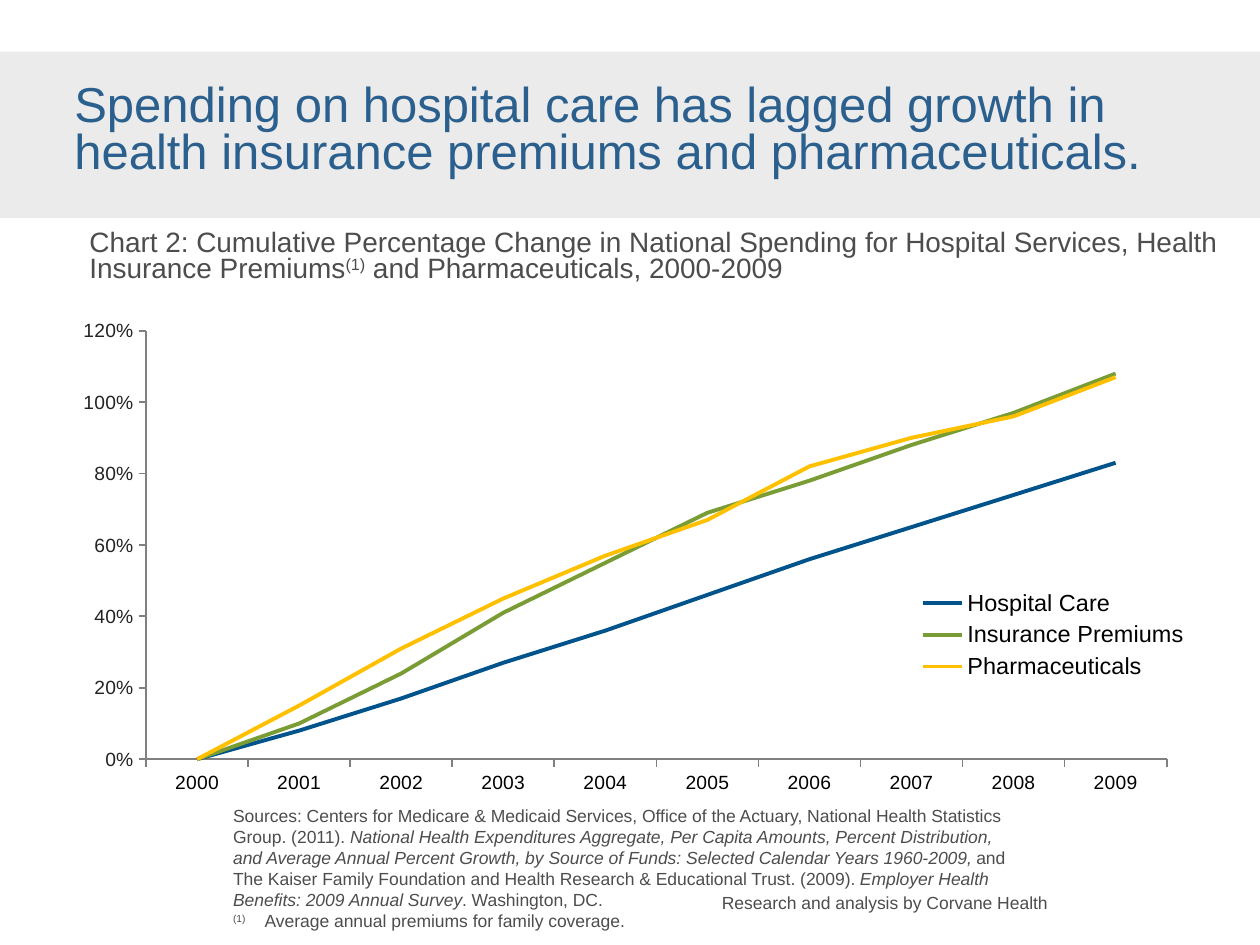
"""Build the slide on growth in hospital, premium and drug spending."""
import pptx
import pptx.chart.data
import pptx.dml.color
import pptx.enum.chart
import pptx.enum.shapes
import pptx.enum.text
import pptx.oxml
import pptx.oxml.ns
import pptx.util

Inches = pptx.util.Inches
Pt = pptx.util.Pt
RGBColor = pptx.dml.color.RGBColor

FONT = "Arial"
BAND = RGBColor(0xEB, 0xEB, 0xEB)
TITLE = RGBColor(0x2B, 0x60, 0x8E)
GREY = RGBColor(0x4D, 0x4D, 0x4D)
BLACK = RGBColor(0, 0, 0)
DARK = RGBColor(0x23, 0x23, 0x23)
AXIS = RGBColor(0x80, 0x80, 0x80)

SERIES = [
    ("Hospital Care", RGBColor(0x00, 0x54, 0x8B),
     [0, 0.08, 0.17, 0.27, 0.36, 0.46, 0.56, 0.65, 0.74, 0.83]),
    ("Insurance Premiums", RGBColor(0x79, 0x9D, 0x34),
     [0, 0.1, 0.24, 0.41, 0.55, 0.69, 0.78, 0.88, 0.97, 1.08]),
    ("Pharmaceuticals", RGBColor(0xFF, 0xC0, 0x00),
     [0, 0.15, 0.31, 0.45, 0.57, 0.67, 0.82, 0.9, 0.96, 1.07]),
]

HEAD = [("Spending on hospital care has lagged growth in health insurance "
         "premiums and pharmaceuticals.", "")]
CAPTION = [
    ("Chart 2: Cumulative Percentage Change in National Spending for "
     "Hospital Services, Health Insurance Premiums", ""),
    ("(1)", "super"),
    (" and Pharmaceuticals, 2000-2009", ""),
]
SOURCES = [
    ("Sources: Centers for Medicare & Medicaid Services, Office of the "
     "Actuary, National Health Statistics Group. (2011). ", ""),
    ("National Health Expenditures Aggregate, Per Capita Amounts, Percent "
     "Distribution, and Average Annual Percent Growth, by Source of Funds: "
     "Selected Calendar Years 1960-2009, ", "italic"),
    ("and The Kaiser Family Foundation and Health Research & Educational "
     "Trust. (2009). ", ""),
    ("Employer Health Benefits: 2009 Annual Survey", "italic"),
    (". Washington, DC.", ""),
]
NOTE = [("(1)", "super"), ("\tAverage annual premiums for family coverage.", "")]
CREDIT = [("Research and analysis by Corvane Health", "")]


def style(font, size, color):
    """Set face, size and colour of a font."""
    font.name = FONT
    font.size = Pt(size)
    font.color.rgb = color


def write(para, runs, size=10, color=GREY, space=None, hang=0):
    """Fill a paragraph with runs marked plain, italic or super."""
    para.alignment = pptx.enum.text.PP_ALIGN.LEFT
    if space:
        para.line_spacing = space
    if hang:
        props = para._p.get_or_add_pPr()
        props.set("marL", str(Inches(hang)))
        props.set("indent", str(-Inches(hang)))
    for text, mark in runs:
        run = para.add_run()
        run.text = text
        style(run.font, size, color)
        if mark == "italic":
            run.font.italic = True
        elif mark == "super":
            run._r.get_or_add_rPr().set("baseline", "30000")


def clear(frame, anchor=pptx.enum.text.MSO_ANCHOR.TOP):
    """Give a text frame wrapping, no insets and a fixed size."""
    frame.word_wrap = True
    frame.auto_size = pptx.enum.text.MSO_AUTO_SIZE.NONE
    frame.vertical_anchor = anchor
    frame.margin_left = frame.margin_right = 0
    frame.margin_top = frame.margin_bottom = 0


def add_text(slide, box, runs, **look):
    """Add a text box and return its frame."""
    frame = slide.shapes.add_textbox(*map(Inches, box)).text_frame
    clear(frame)
    write(frame.paragraphs[0], runs, **look)
    return frame


def add_title(slide):
    """Draw the band and set the title on top of it."""
    band = slide.shapes.add_shape(
        pptx.enum.shapes.MSO_SHAPE.RECTANGLE,
        Inches(0), Inches(0.41), Inches(10), Inches(1.32))
    band.shadow.inherit = False
    band.fill.solid()
    band.fill.fore_color.rgb = BAND
    band.line.fill.background()
    title = slide.shapes.title
    title.left, title.top = Inches(0.59), Inches(0.67)
    title.width, title.height = Inches(9), Inches(0.75)
    clear(title.text_frame, pptx.enum.text.MSO_ANCHOR.MIDDLE)
    write(title.text_frame.paragraphs[0], HEAD,
          size=28, color=TITLE, space=0.8)
    slide.shapes._spTree.append(title._element)


def place(parent, index, box, inner=False):
    """Give a chart part a manual layout in fractions of the chart."""
    for old in parent.findall(pptx.oxml.ns.qn("c:layout")):
        parent.remove(old)
    parts = [("layoutTarget", "inner")] if inner else []
    parts += [("xMode", "edge"), ("yMode", "edge")]
    parts += zip("xywh", box)
    body = "".join(f'<c:{tag} val="{val}"/>' for tag, val in parts)
    parent.insert(index, pptx.oxml.parse_xml(
        f'<c:layout {pptx.oxml.ns.nsdecls("c")}>'
        f"<c:manualLayout>{body}</c:manualLayout></c:layout>"))


def set_axis(axis, color):
    """Format one axis with outer ticks and no grid."""
    axis.has_major_gridlines = False
    axis.major_tick_mark = pptx.enum.chart.XL_TICK_MARK.OUTSIDE
    axis.minor_tick_mark = pptx.enum.chart.XL_TICK_MARK.NONE
    axis.format.line.color.rgb = AXIS
    axis.format.line.width = Pt(1)
    style(axis.tick_labels.font, 11, color)


def add_chart(slide):
    """Add the line chart of cumulative change."""
    data = pptx.chart.data.CategoryChartData(number_format="0%")
    data.categories = [str(year) for year in range(2000, 2010)]
    for name, _, vals in SERIES:
        data.add_series(name, vals)
    chart = slide.shapes.add_chart(
        pptx.enum.chart.XL_CHART_TYPE.LINE, Inches(0.36), Inches(2.08),
        Inches(10), Inches(4.22), data).chart
    chart.has_title = False
    style(chart.font, 13.4, BLACK)
    chart.plots[0].vary_by_categories = False
    for line, (_, color, _) in zip(chart.plots[0].series, SERIES):
        line.smooth = False
        line.marker.style = pptx.enum.chart.XL_MARKER_STYLE.NONE
        line.format.line.color.rgb = color
        line.format.line.width = Pt(2.25)
    set_axis(chart.category_axis, BLACK)
    chart.category_axis.tick_label_position = (
        pptx.enum.chart.XL_TICK_LABEL_POSITION.LOW)
    scale = chart.value_axis
    set_axis(scale, DARK)
    scale.minimum_scale, scale.maximum_scale = 0, 1.2
    scale.major_unit = 0.2
    scale.tick_labels.number_format = "0%"
    scale.tick_labels.number_format_is_linked = False
    chart.has_legend = True
    legend = chart.legend
    legend.position = pptx.enum.chart.XL_LEGEND_POSITION.RIGHT
    legend.include_in_layout = False
    style(legend.font, 13.4, BLACK)
    place(legend._element, 1, (0.69, 0.61, 0.22, 0.19))
    place(chart._chartSpace.chart.plotArea, 0, (0.08, 0.13, 0.81, 0.81), True)


def main():
    """Build and save the slide."""
    deck = pptx.Presentation()
    deck.slide_width, deck.slide_height = Inches(10), Inches(7.5)
    slide = deck.slides.add_slide(deck.slide_layouts[5])
    add_title(slide)
    add_text(slide, (5.73, 7.08, 2.64, 0.17), CREDIT)
    add_chart(slide)
    notes = add_text(slide, (1.85, 6.39, 6.28, 1.18), SOURCES)
    write(notes.add_paragraph(), NOTE, hang=0.25)
    add_text(slide, (0.71, 1.83, 9.07, 0.43), CAPTION, size=16, space=0.8)
    deck.save("out.pptx")


if __name__ == "__main__":
    main()
